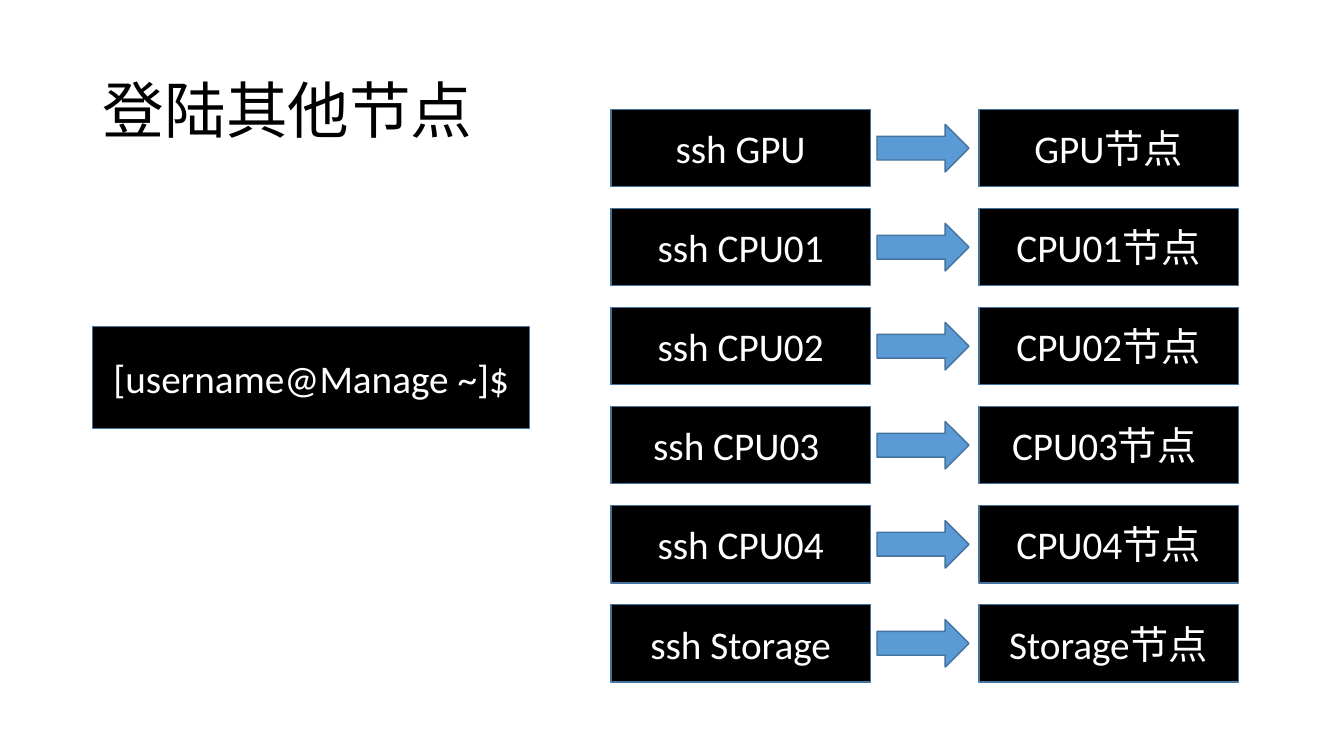
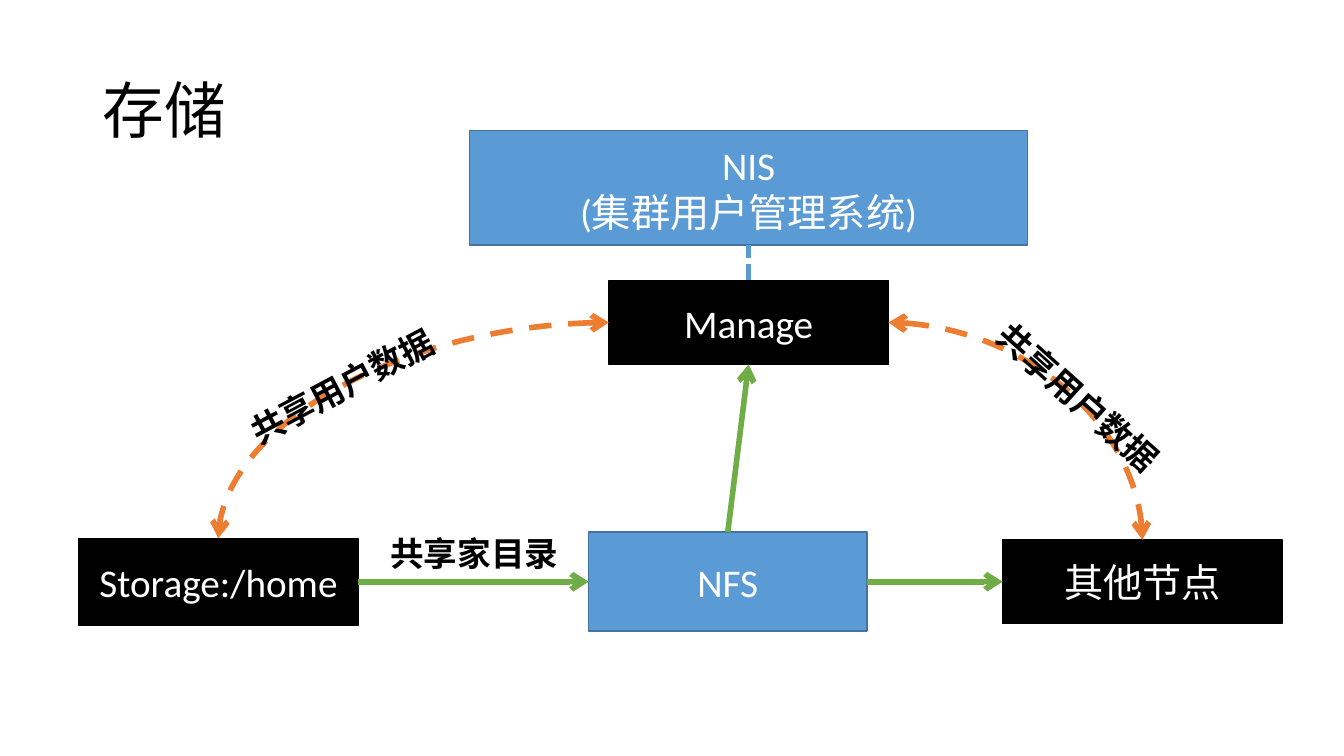
from dataclasses import dataclass

from lxml import etree
from pptx import Presentation
from pptx import util as u
from pptx.dml.color import RGBColor
from pptx.enum import dml, shapes, text
from pptx.oxml.ns import qn

BLACK = RGBColor(0x00, 0x00, 0x00)
WHITE = RGBColor(0xFF, 0xFF, 0xFF)
BLUE = RGBColor(0x5B, 0x9B, 0xD5)
EDGE = RGBColor(0x43, 0x73, 0x9E)
GREEN = RGBColor(0x70, 0xAD, 0x47)
ORANGE = RGBColor(0xED, 0x7D, 0x31)
FONT = "Calibri"
WIDTH, HEIGHT = u.Inches(13.33), u.Inches(7.5)

# Connection sites of a rectangle
TOP, LEFT, BOTTOM, RIGHT = range(4)


@dataclass(frozen=True)
class Area:
    """A rectangle in percent of the slide's width and height."""
    x: float
    y: float
    w: float
    h: float

    def emu(self) -> tuple[int, int, int, int]:
        return (int(WIDTH * self.x / 100), int(HEIGHT * self.y / 100),
                int(WIDTH * self.w / 100), int(HEIGHT * self.h / 100))


@dataclass(frozen=True)
class Node:
    words: str
    area: Area
    fill: RGBColor = BLACK
    edge: RGBColor = BLACK


@dataclass(frozen=True)
class Link:
    start: str
    start_site: int
    end: str
    end_site: int
    color: RGBColor
    dash: dml.MSO_LINE | None = None
    curved: bool = False
    heads: tuple[str, ...] = ("tailEnd",)


@dataclass(frozen=True)
class Label:
    words: str
    area: Area
    rotation: float = 0


TITLE = Area(6.9, 5.3, 86.25, 19.35)

# Login slide: one row per node
PROMPT = Area(6.9, 43.2, 32.5, 13.5)
ROW_TOP, ROW_PITCH, ROW_H = 14.5, 13.1, 10.2
COMMAND_X, NODE_X, BOX_W = 45.45, 72.83, 19.3
ARROW_X, ARROW_W, ARROW_H = 65.25, 6.85, 6.3
LOGINS = [
    ("ssh GPU", "GPU节点"),
    ("ssh CPU01", "CPU01节点"),
    ("ssh CPU02", "CPU02节点"),
    ("ssh CPU03 ", "CPU03节点 "),
    ("ssh CPU04", "CPU04节点"),
    ("ssh Storage", "Storage节点"),
]

# Storage slide
NODES = {
    "nis": Node("NIS\n(集群用户管理系统)", Area(34.95, 17.3, 41.5, 15.1), BLUE, EDGE),
    "storage": Node("Storage:/home", Area(5.85, 71.2, 20.8, 11.5)),
    "manage": Node("Manage", Area(45.3, 37.1, 20.8, 11.1)),
    "others": Node("其他节点", Area(74.6, 71.4, 20.8, 11.1)),
    "nfs": Node("NFS", Area(43.8, 70.4, 20.7, 13.1), BLUE, EDGE),
}
BOTH = ("headEnd", "tailEnd")
LINKS = [
    Link("nfs", RIGHT, "others", LEFT, GREEN),
    Link("storage", RIGHT, "nfs", LEFT, GREEN),
    Link("nfs", TOP, "manage", BOTTOM, GREEN),
    Link("manage", TOP, "nis", BOTTOM, BLUE, dml.MSO_LINE.SQUARE_DOT, heads=()),
    Link("manage", RIGHT, "others", TOP, ORANGE, dml.MSO_LINE.DASH, True, BOTH),
    Link("manage", LEFT, "storage", TOP, ORANGE, dml.MSO_LINE.DASH, True, BOTH),
]
LABELS = [
    Label("共享用户数据", Area(72, 49.2, 16.5, 6.7), 42),
    Label("共享家目录", Area(28.3, 69.9, 14, 6.7)),
    Label("共享用户数据", Area(17.2, 47.7, 16.5, 6.7), 332),
]


def set_font(p, size: float, color: RGBColor, bold: bool = False) -> None:
    p.font.name = FONT
    p.font.size = u.Pt(size)
    p.font.color.rgb = color
    p.font.bold = bold


def add_titled_slide(prs, words: str):
    s = prs.slides.add_slide(prs.slide_layouts[5])
    sp = s.shapes.title
    sp.left, sp.top, sp.width, sp.height = TITLE.emu()
    tf = sp.text_frame
    tf.text = words
    tf.auto_size = text.MSO_AUTO_SIZE.NONE
    tf.vertical_anchor = text.MSO_ANCHOR.MIDDLE
    p = tf.paragraphs[0]
    p.alignment = text.PP_ALIGN.LEFT
    p.line_spacing = 0.9
    set_font(p, 44, BLACK)
    return s


def add_preset(s, kind: shapes.MSO_SHAPE, area: Area, fill: RGBColor, edge: RGBColor):
    sp = s.shapes.add_shape(kind, *area.emu())
    sp.shadow.inherit = False
    sp.fill.solid()
    sp.fill.fore_color.rgb = fill
    sp.line.color.rgb = edge
    sp.line.width = u.Pt(1)
    return sp


def add_node(s, node: Node):
    sp = add_preset(s, shapes.MSO_SHAPE.RECTANGLE, node.area, node.fill, node.edge)
    tf = sp.text_frame
    tf.text = node.words
    tf.vertical_anchor = text.MSO_ANCHOR.MIDDLE
    for p in tf.paragraphs:
        p.alignment = text.PP_ALIGN.CENTER
        set_font(p, 28, WHITE)
    return sp


def add_link(s, link: Link, boxes: dict) -> None:
    kind = shapes.MSO_CONNECTOR.CURVE if link.curved else shapes.MSO_CONNECTOR.STRAIGHT
    c = s.shapes.add_connector(kind, 0, 0, 0, 0)
    c.begin_connect(boxes[link.start], link.start_site)
    c.end_connect(boxes[link.end], link.end_site)
    c.line.color.rgb = link.color
    c.line.width = u.Pt(4)
    if link.dash is not None:
        c.line.dash_style = link.dash
    props = c.element.spPr
    if link.curved:  # a quarter turn instead of an S-curve
        props.find(qn("a:prstGeom")).set("prst", "curvedConnector2")
    for head in link.heads:
        etree.SubElement(props.find(qn("a:ln")), qn(f"a:{head}"), type="arrow")
    etree.SubElement(props, qn("a:effectLst"))


def add_label(s, label: Label) -> None:
    sp = s.shapes.add_textbox(*label.area.emu())
    sp.rotation = label.rotation
    tf = sp.text_frame
    tf.word_wrap = False
    tf.text = label.words
    set_font(tf.paragraphs[0], 24, BLACK, bold=True)


def build_login(prs) -> None:
    s = add_titled_slide(prs, "登陆其他节点")
    add_node(s, Node("[username@Manage ~]$", PROMPT, edge=EDGE))
    for i, (command, target) in enumerate(LOGINS):
        y = ROW_TOP + i * ROW_PITCH
        for words, x in ((command, COMMAND_X), (target, NODE_X)):
            add_node(s, Node(words, Area(x, y, BOX_W, ROW_H), edge=EDGE))
        arrow = Area(ARROW_X, y + (ROW_H - ARROW_H) / 2, ARROW_W, ARROW_H)
        add_preset(s, shapes.MSO_SHAPE.RIGHT_ARROW, arrow, BLUE, EDGE)


def build_storage(prs) -> None:
    s = add_titled_slide(prs, "存储")
    boxes = {key: add_node(s, node) for key, node in NODES.items()}
    for link in LINKS:
        add_link(s, link, boxes)
    for label in LABELS:
        add_label(s, label)


def main() -> None:
    prs = Presentation()
    prs.slide_width, prs.slide_height = WIDTH, HEIGHT
    build_login(prs)
    build_storage(prs)
    prs.save("out.pptx")


if __name__ == "__main__":
    main()
